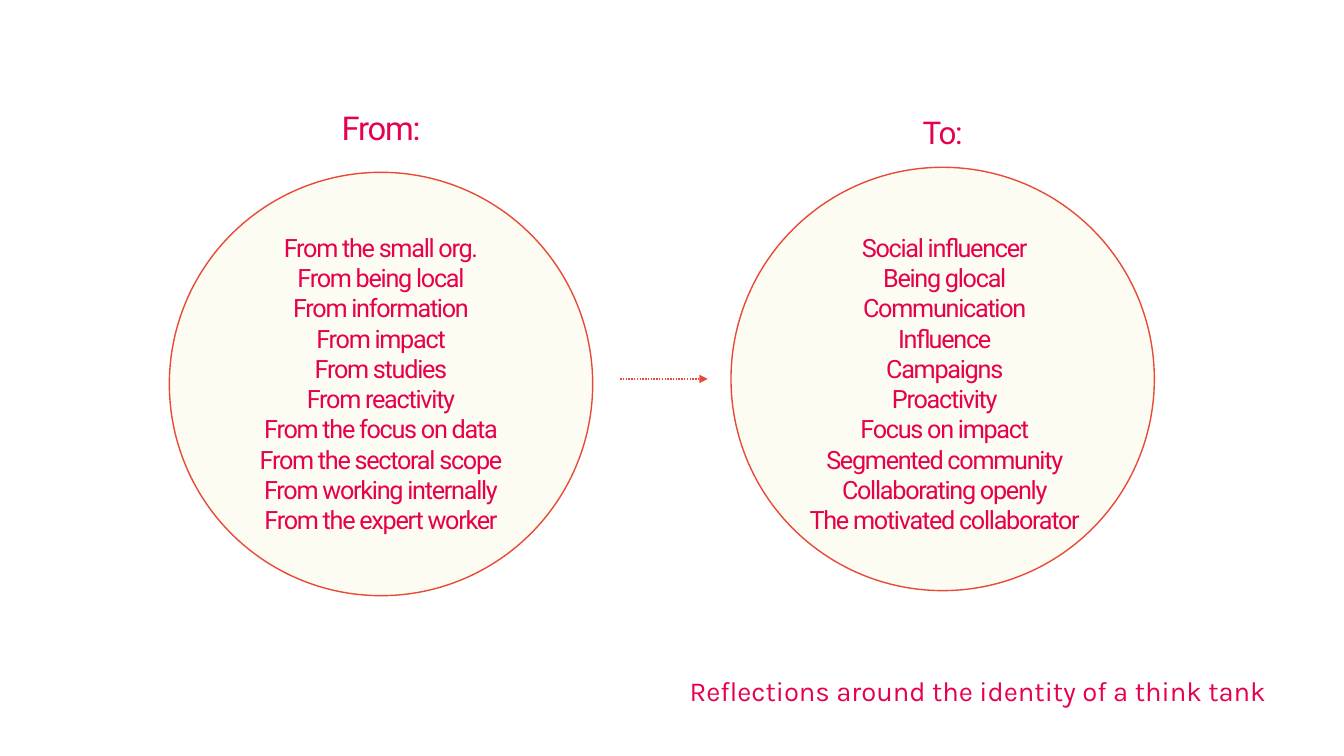
import dataclasses

import lxml.etree
import pptx
import pptx.dml.color
import pptx.enum.dml
import pptx.enum.shapes
import pptx.enum.text
import pptx.oxml.ns
import pptx.util

PINK, RED, CREAM = "E7004C", "E84A37", "FCFCF1"
SLIDE_W, SLIDE_H = pptx.util.Inches(13.33), pptx.util.Inches(7.5)
ALIGN = pptx.enum.text.PP_ALIGN
ANCHOR = pptx.enum.text.MSO_ANCHOR


@dataclasses.dataclass(frozen=True)
class Side:
    """One circle with its heading and list; places are percents of the slide."""
    heading: str
    heading_size: float
    heading_spacing: float
    heading_top: float
    center: float
    circle_top: float
    list_center: float
    items: tuple[str, ...]


SIDES = (
    Side("To:", 22.4, 0.9, 10.53, 70.14, 22.13, 70.29, (
        "Social influencer", "Being glocal", "Communication", "Influence",
        "Campaigns", "Proactivity", "Focus on impact", "Segmented community",
        "Collaborating openly", "The motivated collaborator")),
    Side("From:", 23.4, 0.8, 10.13, 28.35, 22.8, 28.35, (
        "From the small org.", "From being local", "From information",
        "From impact", "From studies", "From reactivity",
        "From the focus on data", "From the sectoral scope",
        "From working internally", "From the expert worker")),
)
CIRCLE_W, CIRCLE_H = 31.5, 56
HEADING_H = 14.53
LIST_TOP, LIST_W, LIST_H = 28.93, 46.36, 43.6


def x(percent: float) -> int:
    return round(SLIDE_W * percent / 100)


def y(percent: float) -> int:
    return round(SLIDE_H * percent / 100)


def box(left: float, top: float, width: float, height: float) -> tuple[int, ...]:
    return x(left), y(top), x(width), y(height)


def rgb(color: str) -> pptx.dml.color.RGBColor:
    return pptx.dml.color.RGBColor.from_string(color)


def add_xml(parent, tag: str, **attributes: str):
    return lxml.etree.SubElement(parent, pptx.oxml.ns.qn(tag), attributes)


def write(s, *lines: str, size: float, font: str = "Roboto", color: str = PINK,
          align=ALIGN.CENTER, anchor=ANCHOR.MIDDLE, line_spacing: float = 1.0,
          tracking: float = 0) -> None:
    """Fill a shape with one paragraph per line; tracking is in points."""
    tf = s.text_frame
    tf.word_wrap = True
    tf.auto_size = pptx.enum.text.MSO_AUTO_SIZE.NONE
    tf.margin_left = tf.margin_right = tf.margin_top = tf.margin_bottom = 0
    tf.vertical_anchor = anchor
    for i, line in enumerate(lines):
        p = tf.add_paragraph() if i else tf.paragraphs[0]
        p.alignment = align
        p.line_spacing = line_spacing
        p.space_before = pptx.util.Pt(0)
        r = p.add_run()
        r.text = line
        r.font.size = pptx.util.Pt(size)
        r.font.name = font
        r.font.color.rgb = rgb(color)
        if tracking:
            r.font._element.set("spc", str(round(tracking * 100)))


def add_title(slide, text: str) -> None:
    s = slide.shapes.title
    s.left, s.top, s.width, s.height = box(51.31, 90.4, 48.69, 3.2)
    write(s, text, size=19.6, font="Karla", align=ALIGN.LEFT,
          anchor=ANCHOR.TOP, line_spacing=0.7)


def add_circle(slide, side: Side) -> None:
    s = slide.shapes.add_shape(
        pptx.enum.shapes.MSO_SHAPE.OVAL,
        *box(side.center - CIRCLE_W / 2, side.circle_top, CIRCLE_W, CIRCLE_H))
    s.shadow.inherit = False
    s.fill.solid()
    s.fill.fore_color.rgb = rgb(CREAM)
    fill_color = s._element.spPr.find(".//" + pptx.oxml.ns.qn("a:srgbClr"))
    add_xml(fill_color, "a:alpha", val="90000")
    s.line.color.rgb = rgb(RED)
    s.line.width = pptx.util.Pt(1)


def add_texts(slide, side: Side) -> None:
    heading = slide.shapes.add_textbox(
        *box(side.center - CIRCLE_W / 2, side.heading_top, CIRCLE_W, HEADING_H))
    write(heading, side.heading, size=side.heading_size,
          line_spacing=side.heading_spacing, tracking=-0.9)
    items = slide.shapes.add_textbox(
        *box(side.list_center - LIST_W / 2, LIST_TOP, LIST_W, LIST_H))
    write(items, *side.items, size=18, tracking=-0.9)


def add_arrow(slide, start: float, end: float, height: float) -> None:
    s = slide.shapes.add_connector(
        pptx.enum.shapes.MSO_CONNECTOR.STRAIGHT,
        x(start), y(height), x(end), y(height))
    s.line.color.rgb = rgb(RED)
    s.line.width = pptx.util.Pt(1)
    s.line.dash_style = pptx.enum.dml.MSO_LINE.ROUND_DOT
    add_xml(s.line._get_or_add_ln(), "a:tailEnd", type="triangle")
    add_xml(s._element.spPr, "a:effectLst")


def main() -> None:
    prs = pptx.Presentation()
    prs.slide_width, prs.slide_height = SLIDE_W, SLIDE_H
    slide = prs.slides.add_slide(prs.slide_layouts.get_by_name("Title Only"))
    add_title(slide, "Reflections around the identity of a think tank")
    for side in SIDES:
        add_circle(slide, side)
    for side in reversed(SIDES):
        add_texts(slide, side)
    add_arrow(slide, 46.14, 52.66, 50.13)
    prs.save("out.pptx")


if __name__ == "__main__":
    main()
